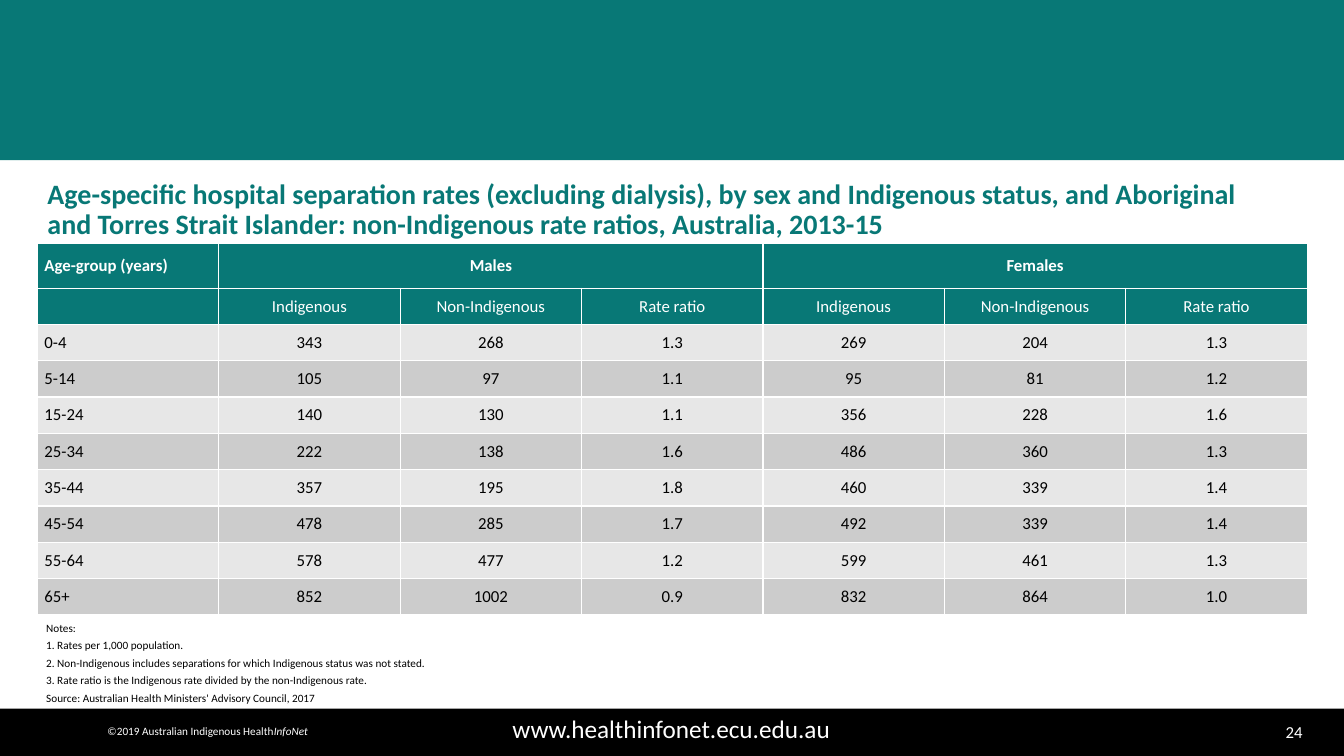
import pptx
import pptx.dml.color
import pptx.enum.shapes
import pptx.enum.text
import pptx.util

RGBColor = pptx.dml.color.RGBColor
TEAL = RGBColor(0x08, 0x78, 0x76)
BLACK = RGBColor(0, 0, 0)
WHITE = RGBColor(0xFF, 0xFF, 0xFF)
PALE_GREY = RGBColor(0xE7, 0xE7, 0xE7)
MID_GREY = RGBColor(0xCC, 0xCC, 0xCC)
ALIGN = pptx.enum.text.PP_ALIGN
MIDDLE = pptx.enum.text.MSO_ANCHOR.MIDDLE
FIT = pptx.enum.text.MSO_AUTO_SIZE
Pt = pptx.util.Pt

deck = pptx.Presentation()
deck.slide_width = pptx.util.Inches(13.33)
deck.slide_height = pptx.util.Inches(7.5)
slide = deck.slides.add_slide(deck.slide_layouts[5])


def area(left, top, width, height):
    """Turn percentages of the slide's width and height into lengths."""
    column, row = deck.slide_width / 100, deck.slide_height / 100
    return round(left * column), round(top * row), round(width * column), round(height * row)


def write(paragraph, text, size, color, bold=False, italic=False):
    run = paragraph.add_run()
    run.text = text
    run.font.name = "Calibri"
    run.font.size = Pt(size)
    run.font.color.rgb = color
    run.font.bold = bold
    run.font.italic = italic


# Header and footer bands
for place, color in [
    (area(-0.23, 0, 100.23, 21.2), TEAL),
    (area(0, 93.73, 100, 6.27), BLACK),
]:
    band = slide.shapes.add_shape(pptx.enum.shapes.MSO_SHAPE.RECTANGLE, *place)
    band.shadow.inherit = False
    band.fill.solid()
    band.fill.fore_color.rgb = color
    band.line.fill.background()

# Footer texts
for place, align, size, wrap, parts in [
    (area(89.63, 94.8, 8.03, 4), ALIGN.RIGHT, 12, True, [("24", False)]),
    (area(4.65, 93.73, 90.6, 5.2), ALIGN.CENTER, 18, True, [("www.healthinfonet.ecu.edu.au", False)]),
    (area(7.13, 95.2, 16.65, 3.2), ALIGN.CENTER, 8, False,
     [("©2019 Australian Indigenous Health", False), ("InfoNet", True)]),
]:
    footer = slide.shapes.add_textbox(*place).text_frame
    footer.word_wrap = wrap
    footer.paragraphs[0].alignment = align
    for text, italic in parts:
        write(footer.paragraphs[0], text, size, WHITE, italic=italic)

# Title
title = slide.shapes.title
title.left, title.top, title.width, title.height = area(2.78, 22.27, 92.25, 11.07)
title.text_frame.auto_size = FIT.NONE
title.text_frame.word_wrap = True
title.text_frame.vertical_anchor = MIDDLE
heading = title.text_frame.paragraphs[0]
heading.alignment = ALIGN.LEFT
heading.line_spacing = 0.9
write(heading, "Age-specific hospital separation rates (excluding dialysis), by sex and Indigenous "
      "status, and Aboriginal and Torres Strait Islander: non-Indigenous rate ratios, "
      "Australia, 2013-15", 20, TEAL, bold=True)

# Table of rates
measures = ["Indigenous", "Non-Indigenous", "Rate ratio"]
rates = [
    ["Age-group (years)", "Males", "", "", "Females", "", ""],
    [""] + measures * 2,
    ["0-4", "343", "268", "1.3", "269", "204", "1.3"],
    ["5-14", "105", "97", "1.1", "95", "81", "1.2"],
    ["15-24", "140", "130", "1.1", "356", "228", "1.6"],
    ["25-34", "222", "138", "1.6", "486", "360", "1.3"],
    ["35-44", "357", "195", "1.8", "460", "339", "1.4"],
    ["45-54", "478", "285", "1.7", "492", "339", "1.4"],
    ["55-64", "578", "477", "1.2", "599", "461", "1.3"],
    ["65+", "852", "1002", "0.9", "832", "864", "1.0"],
]
HEADER_ROWS = 2
table = slide.shapes.add_table(len(rates), len(rates[0]), *area(2.78, 32.13, 94.5, 49.2)).table
for row_index, values in enumerate(rates):
    table.rows[row_index].height = area(0, 0, 0, 4.8 if row_index else 6)[3]
    is_header = row_index < HEADER_ROWS
    fill = TEAL if is_header else (PALE_GREY, MID_GREY)[row_index % 2]
    for column_index, value in enumerate(values):
        cell = table.cell(row_index, column_index)
        cell.fill.solid()
        cell.fill.fore_color.rgb = fill
        cell.vertical_anchor = MIDDLE
        cell.margin_left = cell.margin_right = pptx.util.Inches(0.07)
        cell.margin_top = cell.margin_bottom = 0
        entry = cell.text_frame.paragraphs[0]
        entry.alignment = ALIGN.CENTER if column_index else ALIGN.LEFT
        entry.space_after = Pt(5)
        if value:
            write(entry, value, 12, WHITE if is_header else BLACK, bold=row_index == 0)
for first in (1, 1 + len(measures)):
    table.cell(0, first).merge(table.cell(0, first + len(measures) - 1))

# Notes and source
notes = slide.shapes.add_textbox(*area(2.7, 81.47, 50.03, 12.53)).text_frame
notes.word_wrap = True
notes.auto_size = FIT.SHAPE_TO_FIT_TEXT
note_lines = [
    "Notes:",
    "1. Rates per 1,000 population.",
    "2. Non-Indigenous includes separations for which Indigenous status was not stated.",
    "3. Rate ratio is the Indigenous rate divided by the non-Indigenous rate.",
    "Source: Australian Health Ministers' Advisory Council, 2017",
]
for index, line in enumerate(note_lines):
    note = notes.add_paragraph() if index else notes.paragraphs[0]
    note.space_after = Pt(3 if index < len(note_lines) - 1 else 0)
    write(note, line, 8, BLACK)

deck.save("out.pptx")
